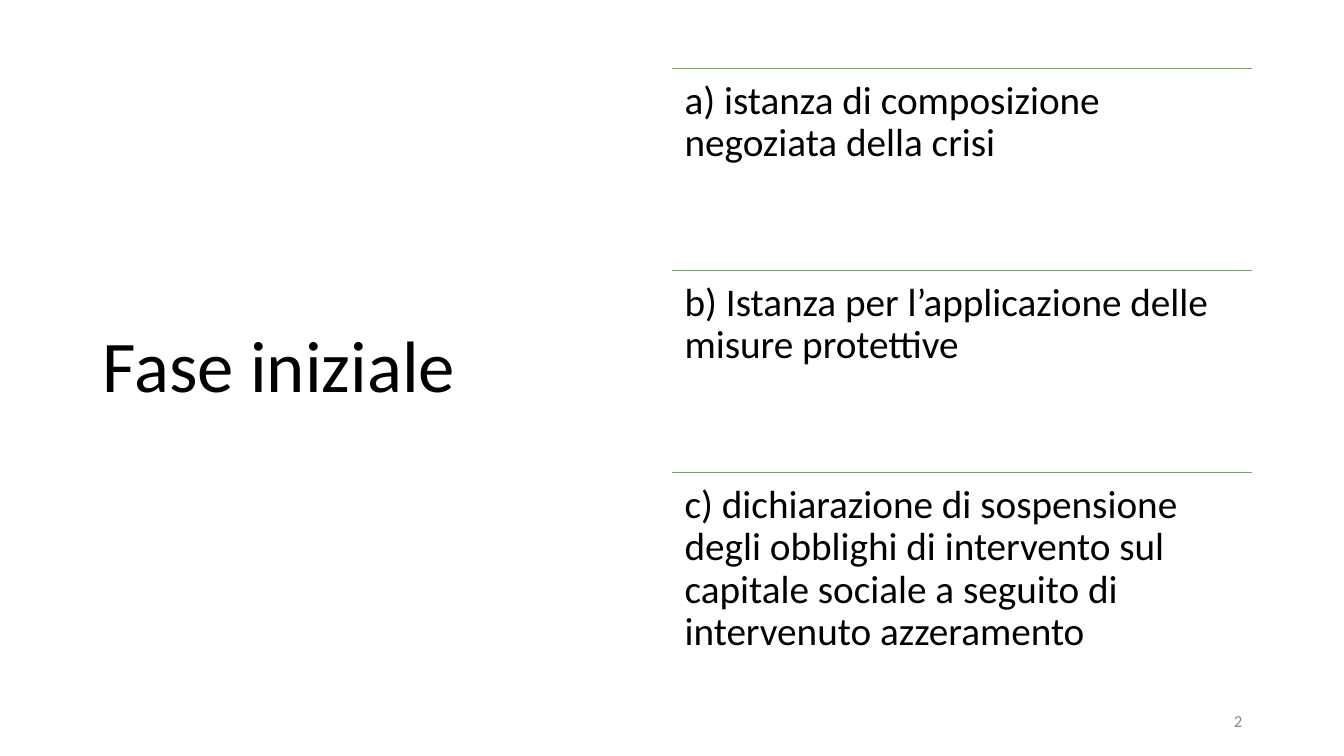
from lxml import etree
from pptx import Presentation
from pptx.dml.color import RGBColor
from pptx.enum.shapes import MSO_CONNECTOR
from pptx.enum.text import MSO_ANCHOR, MSO_AUTO_SIZE, PP_ALIGN
from pptx.oxml.ns import qn
from pptx.util import Inches, Pt

BLACK = RGBColor(0x00, 0x00, 0x00)
GREY = RGBColor(0x89, 0x89, 0x89)
GREEN = RGBColor(0x70, 0xAD, 0x47)
FONT = "Calibri"

STEPS = [
    "a) istanza di composizione negoziata della crisi",
    "b) Istanza per l’applicazione delle misure protettive",
    "c) dichiarazione di sospensione degli obblighi di intervento sul "
    "capitale sociale a seguito di intervenuto azzeramento",
]


def write_text(shape, text, size, color, anchor, align=PP_ALIGN.LEFT, spacing=0.9):
    """Fill a shape with one formatted paragraph."""
    frame = shape.text_frame
    frame.text = text
    frame.word_wrap = True
    frame.auto_size = MSO_AUTO_SIZE.NONE
    frame.vertical_anchor = anchor
    paragraph = frame.paragraphs[0]
    paragraph.alignment = align
    paragraph.line_spacing = spacing
    font = paragraph.runs[0].font
    font.name = FONT
    font.size = Pt(size)
    font.color.rgb = color


def add_title(slide, text, left, top, width, height):
    """Place the title placeholder in the given box."""
    title = slide.shapes.title
    title.left, title.top = Inches(left), Inches(top)
    title.width, title.height = Inches(width), Inches(height)
    write_text(title, text, 52, BLACK, MSO_ANCHOR.MIDDLE)


def add_rule(slide, left, top, width):
    """Draw a thin green horizontal line."""
    rule = slide.shapes.add_connector(
        MSO_CONNECTOR.STRAIGHT,
        Inches(left), Inches(top), Inches(left + width), Inches(top),
    )
    rule.line.color.rgb = GREEN
    rule.line.width = Pt(1)
    etree.SubElement(rule._element.spPr, qn("a:effectLst"))


def add_steps(slide, steps, left, top, width, height):
    """Stack the steps in equal rows, each under a line."""
    row_height = height / len(steps)
    for index, step in enumerate(steps):
        row_top = top + index * row_height
        add_rule(slide, left, row_top, width)
        box = slide.shapes.add_textbox(
            Inches(left), Inches(row_top), Inches(width), Inches(row_height)
        )
        frame = box.text_frame
        frame.margin_left = frame.margin_right = Inches(0.12)
        frame.margin_top = frame.margin_bottom = Inches(0.12)
        write_text(box, step, 28, BLACK, MSO_ANCHOR.TOP)


def add_page_number(slide, number, left, top, width, height):
    """Write the page number at the right of the given box."""
    box = slide.shapes.add_textbox(
        Inches(left), Inches(top), Inches(width), Inches(height)
    )
    write_text(box, number, 12, GREY, MSO_ANCHOR.MIDDLE, PP_ALIGN.RIGHT, 1.0)


def main():
    """Build and save the presentation."""
    presentation = Presentation()
    presentation.slide_width = Inches(13.33)
    presentation.slide_height = Inches(7.5)
    slide = presentation.slides.add_slide(presentation.slide_layouts[5])
    add_title(slide, "Fase iniziale", 0.92, 0.61, 5.32, 6.09)
    add_steps(slide, STEPS, 6.67, 0.68, 5.75, 6.01)
    add_page_number(slide, "2", 9.42, 6.95, 3, 0.4)
    presentation.save("out.pptx")


if __name__ == "__main__":
    main()
